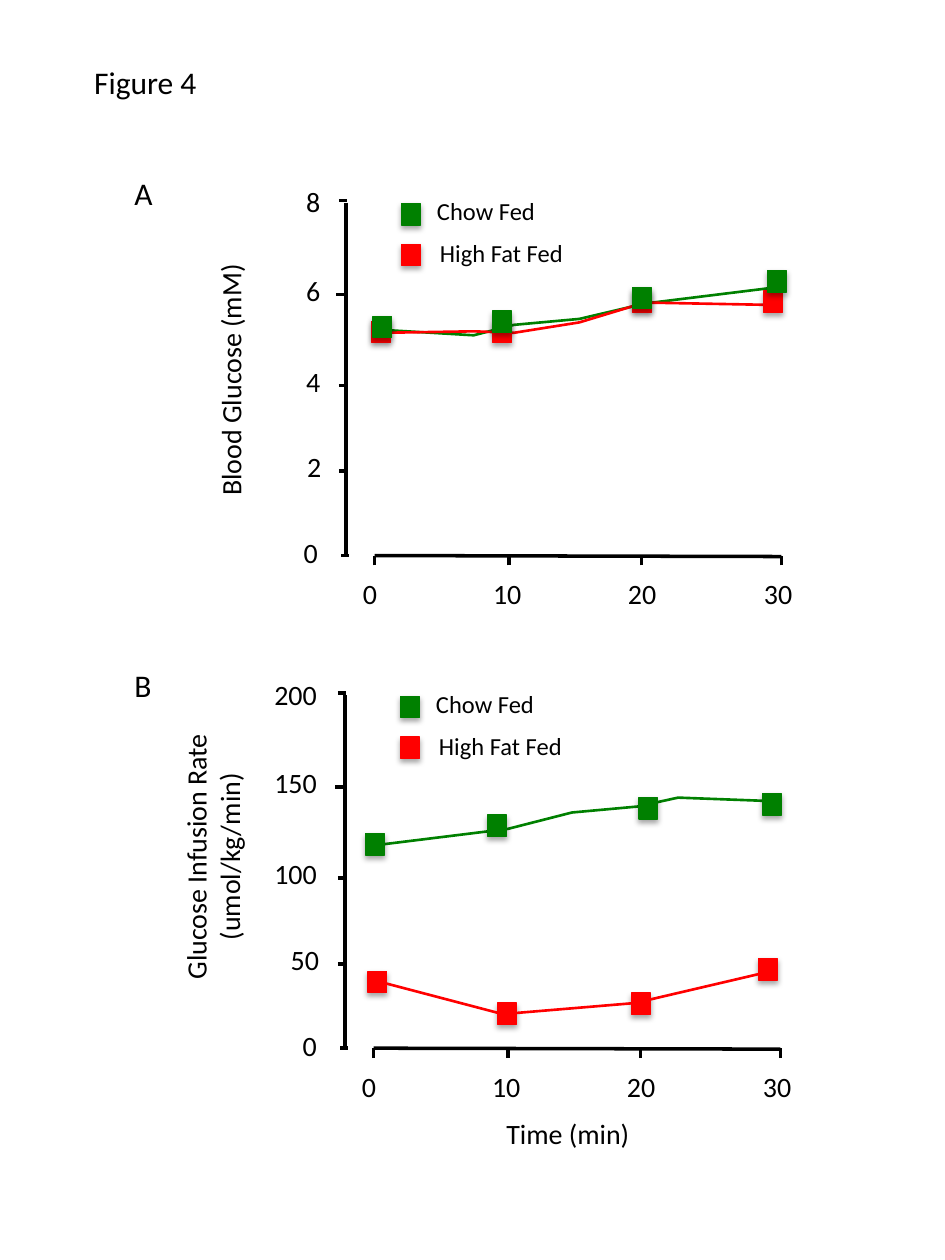
from dataclasses import dataclass

from lxml import etree
from pptx import Presentation
from pptx.dml.color import RGBColor
from pptx.enum.shapes import MSO_CONNECTOR, MSO_SHAPE
from pptx.enum.text import MSO_ANCHOR, PP_ALIGN
from pptx.oxml.ns import qn
from pptx.util import Cm, Pt

LINE = MSO_CONNECTOR.STRAIGHT
RECT = MSO_SHAPE.RECTANGLE
TOP = MSO_ANCHOR.TOP
LEFT, CENTER = PP_ALIGN.LEFT, PP_ALIGN.CENTER


@dataclass(frozen=True)
class Theme:
    font: str = "Calibri"
    black: str = "000000"
    green: str = "008000"
    red: str = "FF0000"
    heading: int = 18
    label: int = 16
    legend: int = 14
    axis_line: float = 2
    data_line: float = 1.5
    marker_line: float = 0.75


THEME = Theme()

# All positions are in centimetres.
HEADINGS = [("Figure 4", 1.65, 1.14, 4.67), ("A", 2.46, 3.38, 1.83), ("B", 2.46, 13.31, 1.83)]
X_TITLE = ("Time (min)", 10.21, 22.5, 2.69)
LEGEND = [("Chow Fed", THEME.green, 4.11, 8.81, 3.96, 2.26),
          ("High Fat Fed", THEME.red, 4.93, 8.87, 4.8, 2.87)]

# Axis geometry of panel A; panel B repeats it at its own shift.
AXIS_X, AXIS_TOP, AXIS_BOTTOM = 6.98, 4.09, 11.2
Y_TICKS = [(6.83, 4.04), (6.78, 5.94), (6.83, 7.77), (6.83, 9.5), (6.88, 11.2)]
Y_LABELS = [(6.48, 3.73), (6.48, 5.51), (6.48, 7.34), (6.5, 9.07), (6.43, 10.8)]
X_TICKS = [7.55, 10.26, 12.93, 15.75]
X_LABELS = [("0", 7.47), ("10", 10.25), ("20", 12.97), ("30", 15.71)]
TICK, X_LABEL_TOP = 0.2, 11.63
DIGIT_W, LABEL_H, LEGEND_H, HEADING_H = 0.31, 0.69, 0.61, 1.04
MARKER_W, MARKER_H, LEGEND_X = 0.38, 0.43, 8.1

PANELS = [
    {
        "shift": (0, 0),
        "title": ["Blood Glucose (mM)"],
        "title_center": (4.65, 7.66),
        "y_values": ["8", "6", "4", "2", "0"],
        "curves": [
            (THEME.green, [(7.7, 6.65), (9.55, 6.76), (10.36, 6.55),
                           (11.68, 6.43), (13, 6.12), (15.67, 5.79)]),
            (THEME.red, [(7.7, 6.71), (9.55, 6.68), (10.36, 6.71),
                         (11.68, 6.5), (13, 6.1), (15.67, 6.15)]),
        ],
        "markers": [
            (THEME.red, [(7.49, 6.48), (9.93, 6.48), (12.75, 5.87), (15.39, 5.87)]),
            (THEME.green, [(7.52, 6.38), (9.93, 6.27), (12.75, 5.79), (15.47, 5.46)]),
        ],
        "segments": [],
    },
    {
        "shift": (-0.02, 9.93),
        "title": ["Glucose Infusion Rate", "(umol/kg/min)"],
        "title_center": (4.29, 17.27),
        "y_values": ["200", "150", "100", "50", "0"],
        "curves": [
            (THEME.green, [(7.57, 17.04), (10.24, 16.71), (11.53, 16.38),
                           (12.85, 16.26), (13.67, 16.08), (15.52, 16.15)]),
        ],
        "markers": [
            (THEME.red, [(7.42, 19.58), (10.03, 20.22), (12.73, 20.02), (15.29, 19.33)]),
            (THEME.green, [(7.37, 16.81), (9.83, 16.43), (12.88, 16.08), (15.37, 16)]),
        ],
        "segments": [((7.65, 19.79), (10.16, 20.45)), ((10.41, 20.42), (12.8, 20.22)),
                     ((12.8, 20.22), (15.54, 19.58))],
    },
]


def add_text(s, lines, x, y, w, h, size, align=LEFT, inset=True, wrap=True):
    box = s.shapes.add_textbox(Cm(x), Cm(y), Cm(w), Cm(h))
    tf = box.text_frame
    tf.word_wrap = wrap
    tf.vertical_anchor = TOP
    if not inset:
        tf.margin_left = tf.margin_right = tf.margin_top = tf.margin_bottom = 0
    for i, line in enumerate(lines):
        p = tf.paragraphs[0] if i == 0 else tf.add_paragraph()
        p.alignment = align
        r = p.add_run()
        r.text = line
        r.font.name = THEME.font
        r.font.size = Pt(size)
        r.font.color.rgb = RGBColor.from_string(THEME.black)
    return box


def add_label(s, text, x, y, w, h=LABEL_H, size=THEME.label):
    return add_text(s, [text], x, y, w, h, size, inset=False, wrap=False)


def add_line(s, start, end, color=THEME.black, width=THEME.axis_line):
    line = s.shapes.add_connector(LINE, *(Cm(v) for v in (*start, *end)))
    line.line.color.rgb = RGBColor.from_string(color)
    line.line.width = Pt(width)
    etree.SubElement(line._element.spPr, qn("a:effectLst"))


def add_curve(s, color, points):
    (x, y), *rest = [(Cm(px), Cm(py)) for px, py in points]
    builder = s.shapes.build_freeform(x, y)
    builder.add_line_segments(rest, close=False)
    curve = builder.convert_to_shape()
    curve.shadow.inherit = False
    curve.fill.background()
    curve.line.color.rgb = RGBColor.from_string(color)
    curve.line.width = Pt(THEME.data_line)


def add_marker(s, color, x, y):
    marker = s.shapes.add_shape(RECT, Cm(x), Cm(y), Cm(MARKER_W), Cm(MARKER_H))
    marker.fill.solid()
    marker.fill.fore_color.rgb = RGBColor.from_string(color)
    marker.line.color.rgb = RGBColor.from_string(color)
    marker.line.width = Pt(THEME.marker_line)
    marker.shadow.inherit = False
    effects = marker._element.spPr.find(qn("a:effectLst"))
    shadow = etree.SubElement(effects, qn("a:outerShdw"), blurRad=str(Pt(3.1)),
                              dist=str(Pt(1.8)), dir="5400000", rotWithShape="0")
    tint = etree.SubElement(shadow, qn("a:srgbClr"), val=THEME.black)
    etree.SubElement(tint, qn("a:alpha"), val="35000")


def add_axes(s, dx, dy, y_values):
    x, bottom = AXIS_X + dx, AXIS_BOTTOM + dy
    add_line(s, (x, AXIS_TOP + dy), (x, bottom))
    for left, y in Y_TICKS:
        add_line(s, (left + dx, y + dy), (left + dx + 0.16, y + dy))
    add_line(s, (X_TICKS[0] + dx, bottom), (X_TICKS[-1] + dx, bottom + 0.02))
    for tick in X_TICKS:
        add_line(s, (tick + dx, bottom + TICK), (tick + dx, bottom))
    for text, (right, y) in zip(y_values, Y_LABELS):
        w = DIGIT_W * len(text)
        add_label(s, text, right + dx - w, y + dy, w)
    for text, center in X_LABELS:
        w = DIGIT_W * len(text)
        add_label(s, text, center + dx - w / 2, X_LABEL_TOP + dy, w)


def add_panel(s, panel):
    dx, dy = panel["shift"]
    add_axes(s, dx, dy, panel["y_values"])

    w, h = 8, LABEL_H * len(panel["title"])
    cx, cy = panel["title_center"]
    title = add_text(s, panel["title"], cx - w / 2, cy - h / 2, w, h,
                     THEME.label, CENTER, inset=False)
    title.rotation = 270

    for color, points in panel["curves"]:
        add_curve(s, color, points)
    for color, corners in panel["markers"]:
        for x, y in corners:
            add_marker(s, color, x, y)
    for start, end in panel["segments"]:
        add_line(s, start, end, THEME.red, THEME.data_line)
    for name, color, key_y, x, y, w in LEGEND:
        add_marker(s, color, LEGEND_X + dx, key_y + dy)
        add_label(s, name, x + dx, y + dy, w, LEGEND_H, THEME.legend)


def main():
    prs = Presentation()
    prs.slide_width, prs.slide_height = Cm(19.05), Cm(25.4)
    s = prs.slides.add_slide(prs.slide_layouts[6])
    for panel in PANELS:
        add_panel(s, panel)
    add_label(s, *X_TITLE)
    for text, x, y, w in HEADINGS:
        add_text(s, [text], x, y, w, HEADING_H, THEME.heading)
    prs.save("out.pptx")


if __name__ == "__main__":
    main()
